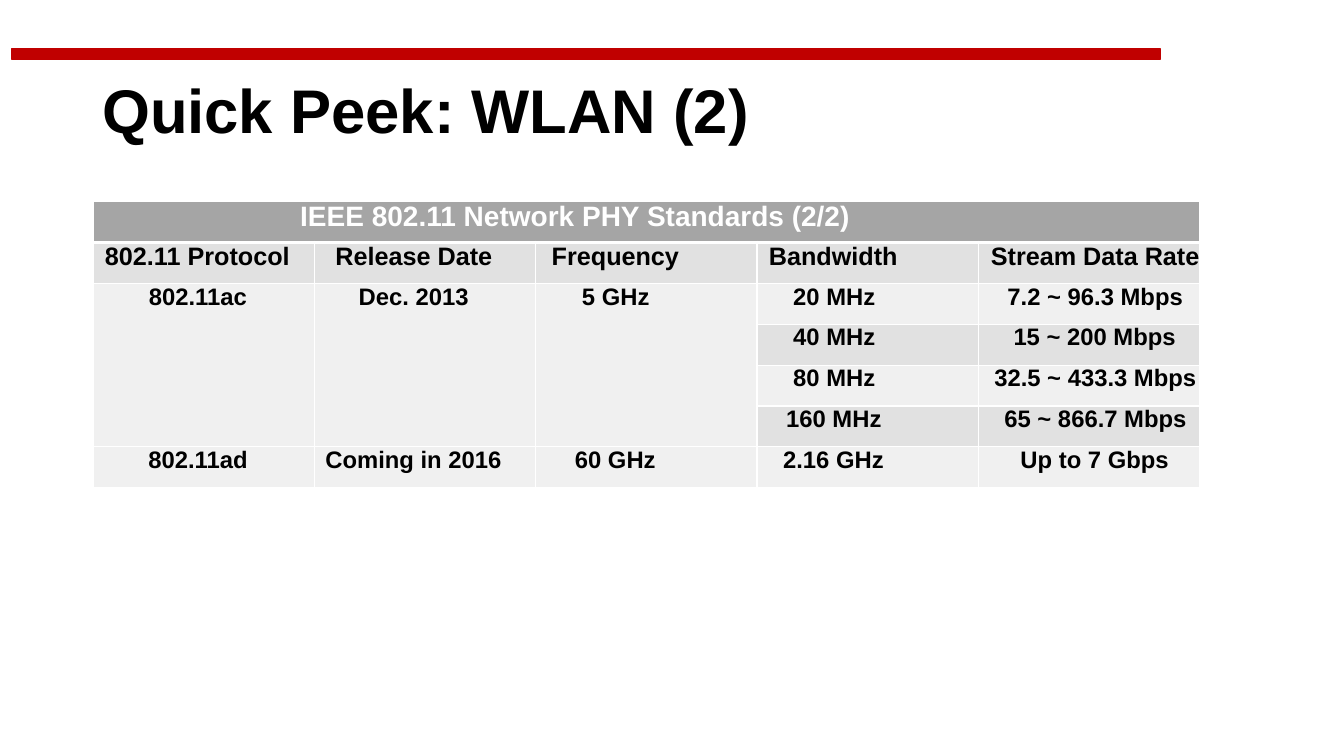
from dataclasses import dataclass

import pptx
import pptx.dml.color
import pptx.enum.shapes
import pptx.enum.text
import pptx.oxml
import pptx.oxml.ns
import pptx.util

Pt = pptx.util.Pt
FONT = "Arial"
RED, BLACK, WHITE = "C00000", "000000", "FFFFFF"
HEADER, DARK_BAND, LIGHT_BAND = "A5A5A5", "E1E1E1", "F0F0F0"
ROWS, COLS = 7, 5
COL_WIDTH, ROW_HEIGHT = 158.1, 29.2


@dataclass
class Entry:
    row: int
    col: int
    text: str
    indent: float
    row_span: int = 1
    col_span: int = 1


ENTRIES = [
    Entry(0, 0, "IEEE 802.11 Network PHY Standards (2/2)", 148, col_span=COLS),
    Entry(1, 0, "802.11 Protocol", 8.6),
    Entry(1, 1, "Release Date", 15.1),
    Entry(1, 2, "Frequency", 11.5),
    Entry(1, 3, "Bandwidth", 8.6),
    Entry(1, 4, "Stream Data Rate", 9),
    Entry(2, 0, "802.11ac", 40, row_span=4),
    Entry(2, 1, "Dec. 2013", 31.7, row_span=4),
    Entry(2, 2, "5 GHz", 33.1, row_span=4),
    Entry(2, 3, "20 MHz", 25.9),
    Entry(2, 4, "7.2 ~ 96.3 Mbps", 20.9),
    Entry(3, 3, "40 MHz", 25.9),
    Entry(3, 4, "15 ~ 200 Mbps", 25.2),
    Entry(4, 3, "80 MHz", 25.9),
    Entry(4, 4, "32.5 ~ 433.3 Mbps", 11.5),
    Entry(5, 3, "160 MHz", 20.9),
    Entry(5, 4, "65 ~ 866.7 Mbps", 18.7),
    Entry(6, 0, "802.11ad", 39.6),
    Entry(6, 1, "Coming in 2016", 7.9),
    Entry(6, 2, "60 GHz", 28.1),
    Entry(6, 3, "2.16 GHz", 18.7),
    Entry(6, 4, "Up to 7 Gbps", 30.2),
]


def rgb(color: str) -> pptx.dml.color.RGBColor:
    return pptx.dml.color.RGBColor.from_string(color)


def style(p, size: float, color: str) -> None:
    p.font.name = FONT
    p.font.size = Pt(size)
    p.font.bold = True
    p.font.color.rgb = rgb(color)


def add_bar(s) -> None:
    sp = s.shapes.add_shape(pptx.enum.shapes.MSO_SHAPE.RECTANGLE,
                            Pt(8.6), Pt(34.6), Pt(820), Pt(7.9))
    sp.shadow.inherit = False
    sp.fill.solid()
    sp.fill.fore_color.rgb = rgb(RED)
    sp.line.color.rgb = rgb(RED)
    sp.line.width = Pt(1)


def add_title(s, text: str) -> None:
    tf = s.shapes.add_textbox(Pt(66), Pt(28.8), Pt(828), Pt(104.4)).text_frame
    tf.word_wrap = True
    tf.vertical_anchor = pptx.enum.text.MSO_ANCHOR.MIDDLE
    p = tf.paragraphs[0]
    p.text = text
    p.line_spacing = 0.9
    style(p, 44, BLACK)


def set_borders(cell, top: float, bottom: float) -> None:
    tc_pr = cell._tc.get_or_add_tcPr()
    for side, width in (("L", 1), ("R", 1), ("T", top), ("B", bottom)):
        tc_pr.append(pptx.oxml.parse_xml(
            f'<a:ln{side} {pptx.oxml.ns.nsdecls("a")} w="{Pt(width)}"><a:solidFill>'
            f'<a:srgbClr val="{WHITE}"/></a:solidFill></a:ln{side}>'))


def add_standards_table(s) -> None:
    table = s.shapes.add_table(ROWS, COLS, Pt(66.4), Pt(144),
                               Pt(COL_WIDTH * COLS), Pt(ROW_HEIGHT * ROWS)).table
    for column in table.columns:
        column.width = Pt(COL_WIDTH)

    # Header, then alternating bands
    for i, row in enumerate(table.rows):
        row.height = Pt(ROW_HEIGHT)
        band = HEADER if i == 0 else DARK_BAND if i % 2 else LIGHT_BAND
        for cell in row.cells:
            set_borders(cell, 3 if i == 1 else 1, 3 if i == 0 else 1)
            cell.fill.solid()
            cell.fill.fore_color.rgb = rgb(band)
            cell.margin_left = cell.margin_right = Pt(0)
            cell.margin_top = cell.margin_bottom = Pt(0)

    # Cell text and spans
    for entry in ENTRIES:
        cell = table.cell(entry.row, entry.col)
        if entry.row_span > 1 or entry.col_span > 1:
            cell.merge(table.cell(entry.row + entry.row_span - 1,
                                  entry.col + entry.col_span - 1))
        p = cell.text_frame.paragraphs[0]
        p.text = entry.text
        p._p.get_or_add_pPr().set("marL", str(Pt(entry.indent)))
        style(p, {0: 20, 1: 18}.get(entry.row, 17), BLACK if entry.row else WHITE)


def main() -> None:
    prs = pptx.Presentation()
    prs.slide_width, prs.slide_height = Pt(960), Pt(540)
    s = prs.slides.add_slide(prs.slide_layouts[6])
    add_bar(s)
    add_title(s, "Quick Peek: WLAN (2)")
    add_standards_table(s)
    prs.save("out.pptx")


if __name__ == "__main__":
    main()
